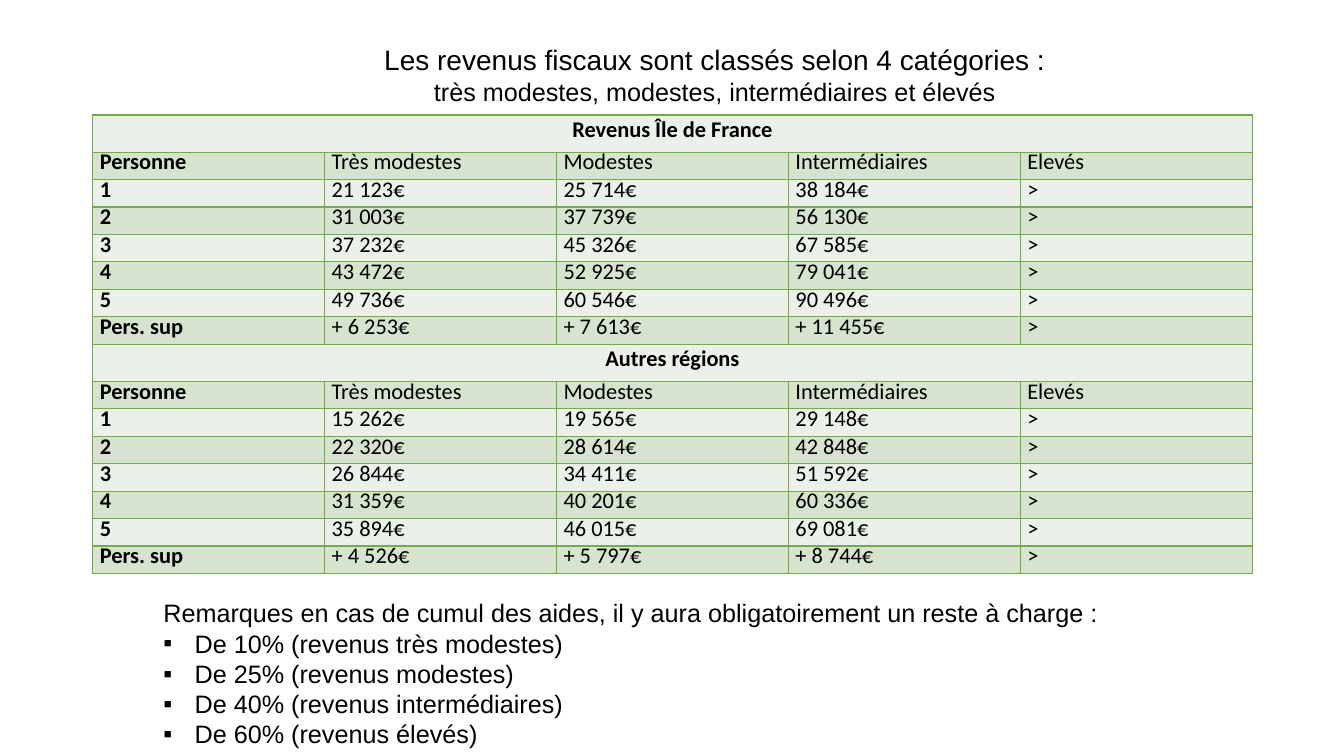
from dataclasses import dataclass

from lxml.etree import SubElement
from pptx import Presentation
from pptx.dml.color import RGBColor
from pptx.enum.text import MSO_ANCHOR, MSO_AUTO_SIZE, PP_ALIGN
from pptx.oxml.ns import qn
from pptx.util import Inches, Pt

BLACK = RGBColor(0x00, 0x00, 0x00)
BORDER_GREEN = RGBColor(0x70, 0xAD, 0x47)
LIGHT_GREEN = RGBColor(0xEB, 0xF1, 0xE9)
MID_GREEN = RGBColor(0xD5, 0xE3, 0xCF)

TABLE_HEIGHT, REGION_ROW_HEIGHT = 4.55, 0.37
COLUMN_WIDTH = 2.3
BULLET_INDENT = Inches(0.31)


@dataclass(frozen=True)
class Region:
    name: str
    ceilings: list[tuple[str, str, str]]


CATEGORIES = ["Personne", "Très modestes", "Modestes", "Intermédiaires", "Elevés"]
HOUSEHOLDS = ["1", "2", "3", "4", "5", "Pers. sup"]
REGIONS = [
    Region("Revenus Île de France", [
        ("21 123€", "25 714€", "38 184€"),
        ("31 003€", "37 739€", "56 130€"),
        ("37 232€", "45 326€", "67 585€"),
        ("43 472€", "52 925€", "79 041€"),
        ("49 736€", "60 546€", "90 496€"),
        ("+ 6 253€", "+ 7 613€", "+ 11 455€"),
    ]),
    Region("Autres régions", [
        ("15 262€", "19 565€", "29 148€"),
        ("22 320€", "28 614€", "42 848€"),
        ("26 844€", "34 411€", "51 592€"),
        ("31 359€", "40 201€", "60 336€"),
        ("35 894€", "46 015€", "69 081€"),
        ("+ 4 526€", "+ 5 797€", "+ 8 744€"),
    ]),
]
HEADING = [
    ("Les revenus fiscaux sont classés selon 4 catégories :", 20),
    ("très modestes, modestes, intermédiaires et élevés", 18),
]
REMARK = "Remarques en cas de cumul des aides, il y aura obligatoirement un reste à charge :"
REMAINDERS = [
    "De 10% (revenus très modestes)",
    "De 25% (revenus modestes)",
    "De 40% (revenus intermédiaires)",
    "De 60% (revenus élevés)",
]


def format_runs(paragraph, font_name: str, size: float, bold: bool = False) -> None:
    for run in paragraph.runs:
        run.font.name = font_name
        run.font.size = Pt(size)
        run.font.bold = bold
        run.font.color.rgb = BLACK


def place(placeholder, left: float, top: float, width: float, height: float) -> None:
    placeholder.left, placeholder.top = Inches(left), Inches(top)
    placeholder.width, placeholder.height = Inches(width), Inches(height)
    frame = placeholder.text_frame
    frame.word_wrap = True
    frame.auto_size = MSO_AUTO_SIZE.NONE
    frame.vertical_anchor = MSO_ANCHOR.TOP


def add_heading(slide) -> None:
    title = slide.shapes.title
    place(title, 1.34, 0.37, 11.5, 0.74)
    title.text_frame.text = "\n".join(line for line, _ in HEADING)
    for paragraph, (_, size) in zip(title.text_frame.paragraphs, HEADING):
        paragraph.alignment = PP_ALIGN.CENTER
        format_runs(paragraph, "Arial", size)


def set_bullet(paragraph, bulleted: bool) -> None:
    properties = paragraph._p.get_or_add_pPr()
    indent = BULLET_INDENT if bulleted else 0
    properties.set("marL", str(indent))
    properties.set("indent", str(-indent))
    if bulleted:
        SubElement(properties, qn("a:buFont"), typeface="Arial")
        SubElement(properties, qn("a:buChar"), char="▪")
    else:
        SubElement(properties, qn("a:buNone"))


def add_remarks(slide) -> None:
    remarks = slide.placeholders[1]
    place(remarks, 1.52, 5.88, 9.98, 1.62)
    remarks.text_frame.text = "\n".join([REMARK, *REMAINDERS])
    for index, paragraph in enumerate(remarks.text_frame.paragraphs):
        set_bullet(paragraph, bulleted=index > 0)
        paragraph.space_before = Pt(0)
        format_runs(paragraph, "Arial", 18)


def style_cell(cell, fill: RGBColor) -> None:
    properties = cell._tc.get_or_add_tcPr()
    for side in ("lnL", "lnR", "lnT", "lnB"):
        line = SubElement(properties, qn(f"a:{side}"), w=str(Pt(1)))
        SubElement(SubElement(line, qn("a:solidFill")), qn("a:srgbClr"), val=str(BORDER_GREEN))
    cell.fill.solid()
    cell.fill.fore_color.rgb = fill
    cell.vertical_anchor = MSO_ANCHOR.MIDDLE
    cell.margin_left = cell.margin_right = Inches(0.07)
    cell.margin_top = cell.margin_bottom = 0


def write_cell(cell, text: str, bold: bool, alignment: PP_ALIGN = PP_ALIGN.LEFT) -> None:
    cell.text_frame.text = text
    paragraph = cell.text_frame.paragraphs[0]
    paragraph.alignment = alignment
    paragraph.line_spacing = Pt(14.4)
    paragraph.space_after = Pt(8)
    format_runs(paragraph, "Calibri", 16, bold)


def table_rows() -> list[list[str]]:
    """Give one list per row; a region name stands alone in its row."""
    rows = []
    for region in REGIONS:
        rows += [[region.name], CATEGORIES]
        rows += [[household, *ceilings, ">"]
                 for household, ceilings in zip(HOUSEHOLDS, region.ceilings)]
    return rows


def add_income_table(slide) -> None:
    rows = table_rows()
    column_count = len(CATEGORIES)
    table = slide.shapes.add_table(
        len(rows), column_count, Inches(0.92), Inches(1.14),
        Inches(COLUMN_WIDTH * column_count), Inches(TABLE_HEIGHT)).table
    table.first_row = table.horz_banding = False
    for column in table.columns:
        column.width = Inches(COLUMN_WIDTH)
    value_rows = len(rows) - len(REGIONS)
    value_height = (TABLE_HEIGHT - REGION_ROW_HEIGHT * len(REGIONS)) / value_rows

    for row_index, texts in enumerate(rows):
        is_region = len(texts) == 1
        table.rows[row_index].height = Inches(REGION_ROW_HEIGHT if is_region else value_height)
        for column_index in range(column_count):
            style_cell(table.cell(row_index, column_index),
                       MID_GREEN if row_index % 2 else LIGHT_GREEN)
        if is_region:
            region_cell = table.cell(row_index, 0)
            region_cell.merge(table.cell(row_index, column_count - 1))
            write_cell(region_cell, texts[0], True, PP_ALIGN.CENTER)
        else:
            for column_index, text in enumerate(texts):
                write_cell(table.cell(row_index, column_index), text, column_index == 0)


def main() -> None:
    presentation = Presentation()
    presentation.slide_width, presentation.slide_height = Inches(13.33), Inches(7.5)
    slide = presentation.slides.add_slide(presentation.slide_layouts[1])
    add_heading(slide)
    add_income_table(slide)
    add_remarks(slide)
    presentation.save("out.pptx")


if __name__ == "__main__":
    main()
